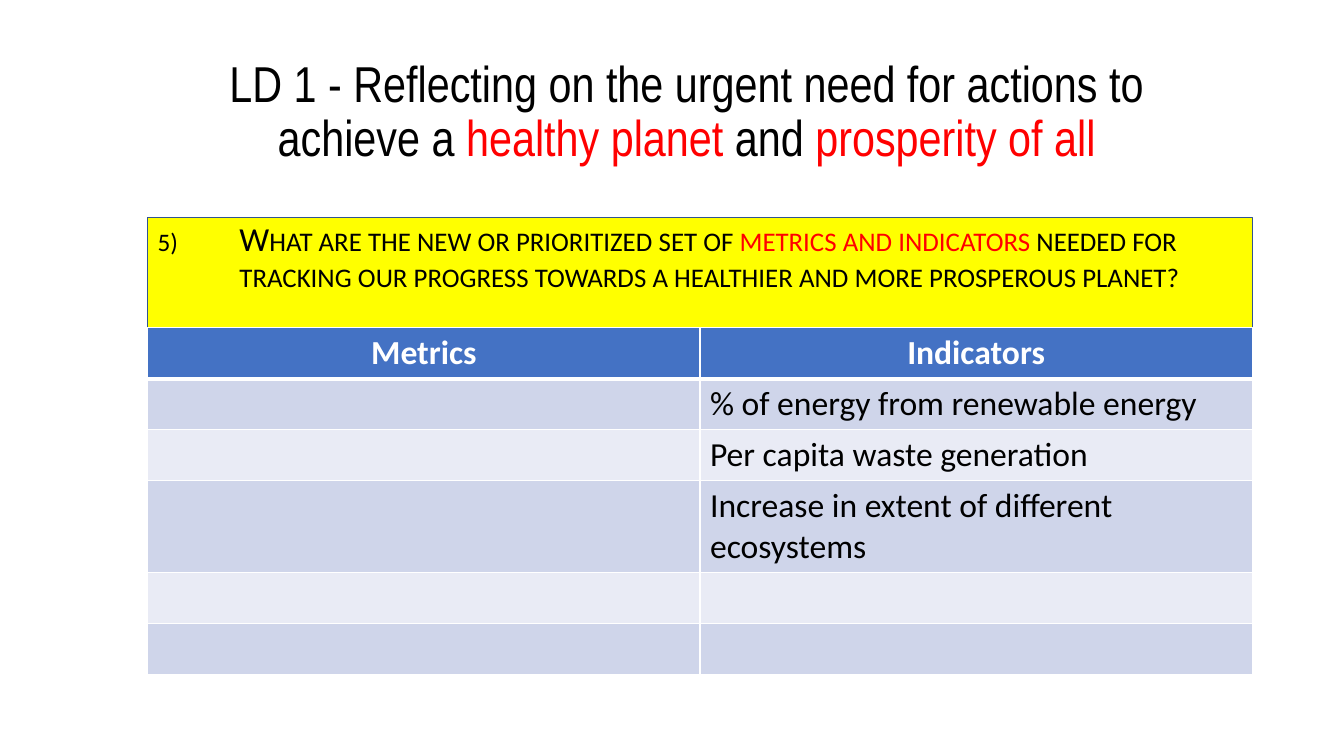
from lxml import etree
from pptx import Presentation
from pptx.dml.color import RGBColor
from pptx.enum.shapes import MSO_SHAPE
from pptx.enum.text import MSO_ANCHOR, PP_ALIGN
from pptx.oxml.ns import qn
from pptx.util import Pt

RECT = MSO_SHAPE.RECTANGLE
TOP, MIDDLE = MSO_ANCHOR.TOP, MSO_ANCHOR.MIDDLE
LEFT, CENTER = PP_ALIGN.LEFT, PP_ALIGN.CENTER

BLACK, WHITE, RED = "000000", "FFFFFF", "FF0000"
YELLOW, NAVY, BLUE = "FFFF00", "325491", "4472C4"
BANDS = "CFD5EA", "E9EBF5"


def color(code):
    return RGBColor.from_string(code)


def node(parent, tag, **attrs):
    return etree.SubElement(parent, qn(tag), {k: str(v) for k, v in attrs.items()})


class Board:
    body, title = "Calibri", "Arial Narrow"

    def __init__(self, slide):
        self.slide = slide

    def add_runs(self, para, runs, size, font, bold=False, caps=False):
        """Add (text, colour) runs to a paragraph."""
        for text, tint in runs:
            run = para.add_run()
            run.text = text
            face = run.font
            face.name, face.size, face.bold = font, Pt(size), bold
            face.color.rgb = color(tint)
            if caps:
                run._r.get_or_add_rPr().set("cap", "small")

    def panel(self, box, fill, line):
        shape = self.slide.shapes.add_shape(RECT, *map(Pt, box))
        shape.shadow.inherit = False
        shape.fill.solid()
        shape.fill.fore_color.rgb = color(fill)
        shape.line.color.rgb = color(line)
        shape.line.width = Pt(1)

    def text(self, box, runs, size, font, anchor=TOP, align=LEFT, caps=False):
        frame = self.slide.shapes.add_textbox(*map(Pt, box)).text_frame
        frame.word_wrap = True
        frame.vertical_anchor = anchor
        para = frame.paragraphs[0]
        para.alignment = align
        para.line_spacing = 0.9
        self.add_runs(para, runs, size, font, caps=caps)
        return para

    def number(self, para, start, indent):
        """Number a paragraph with a hanging indent."""
        props = para._p.get_or_add_pPr()
        props.set("marL", str(Pt(indent)))
        props.set("indent", str(-Pt(indent)))
        node(props, "a:buSzPct", val=75000)
        node(props, "a:buFont", typeface=self.body)
        node(props, "a:buAutoNum", type="arabicParenR", startAt=start)

    def edge(self, cell, sides):
        """Draw white cell borders from a dict of side to width."""
        props = cell._tc.get_or_add_tcPr()
        for spot, side in enumerate("LRTB"):
            line = node(props, f"a:ln{side}", w=Pt(sides.get(side, 1)))
            node(node(line, "a:solidFill"), "a:srgbClr", val=WHITE)
            props.insert(spot, line)

    def table(self, box, rows, heights):
        grid = self.slide.shapes.add_table(len(rows), len(rows[0]), *map(Pt, box)).table
        for r, (row, height) in enumerate(zip(rows, heights)):
            grid.rows[r].height = Pt(height)
            head = r == 0
            fill = BLUE if head else BANDS[(r - 1) % 2]
            sides = {0: {"B": 3}, 1: {"T": 3}}.get(r, {})
            for c, text in enumerate(row):
                cell = grid.cell(r, c)
                cell.fill.solid()
                cell.fill.fore_color.rgb = color(fill)
                self.edge(cell, sides)
                if text:
                    para = cell.text_frame.paragraphs[0]
                    para.alignment = CENTER if head else LEFT
                    tint = WHITE if head else BLACK
                    self.add_runs(para, [(text, tint)], 24, self.body, bold=head)


def main():
    deck = Presentation()
    deck.slide_width, deck.slide_height = Pt(960), Pt(540)
    board = Board(deck.slides.add_slide(deck.slide_layouts[6]))

    left, top, width = 105.5, 155.5, 789
    board.panel((left, top, width, 177), YELLOW, NAVY)
    ask = board.text((left, top, width, 384), [
        ("What are the new or prioritized set of ", BLACK),
        ("metrics and indicators ", RED),
        ("needed for tracking our progress towards a healthier "
         "and more prosperous planet?", BLACK),
    ], 24, board.body, caps=True)
    board.number(ask, 5, 58.5)

    board.text((left, 29, 770, 104), [
        ("LD 1 - Reflecting on the urgent need for actions to achieve a ", BLACK),
        ("healthy planet", RED),
        (" and ", BLACK),
        ("prosperity of all", RED),
    ], 36, board.title, MIDDLE, CENTER)

    rows = [
        ("Metrics", "Indicators"),
        ("", "% of energy from renewable energy"),
        ("", "Per capita waste generation"),
        ("", "Increase in extent of different ecosystems"),
        ("", ""),
        ("", ""),
    ]
    heights = [36.5, 36.5, 36.5, 65.5, 36.5, 36.5]
    board.table((left, 234, width, sum(heights)), rows, heights)
    deck.save("out.pptx")


if __name__ == "__main__":
    main()
